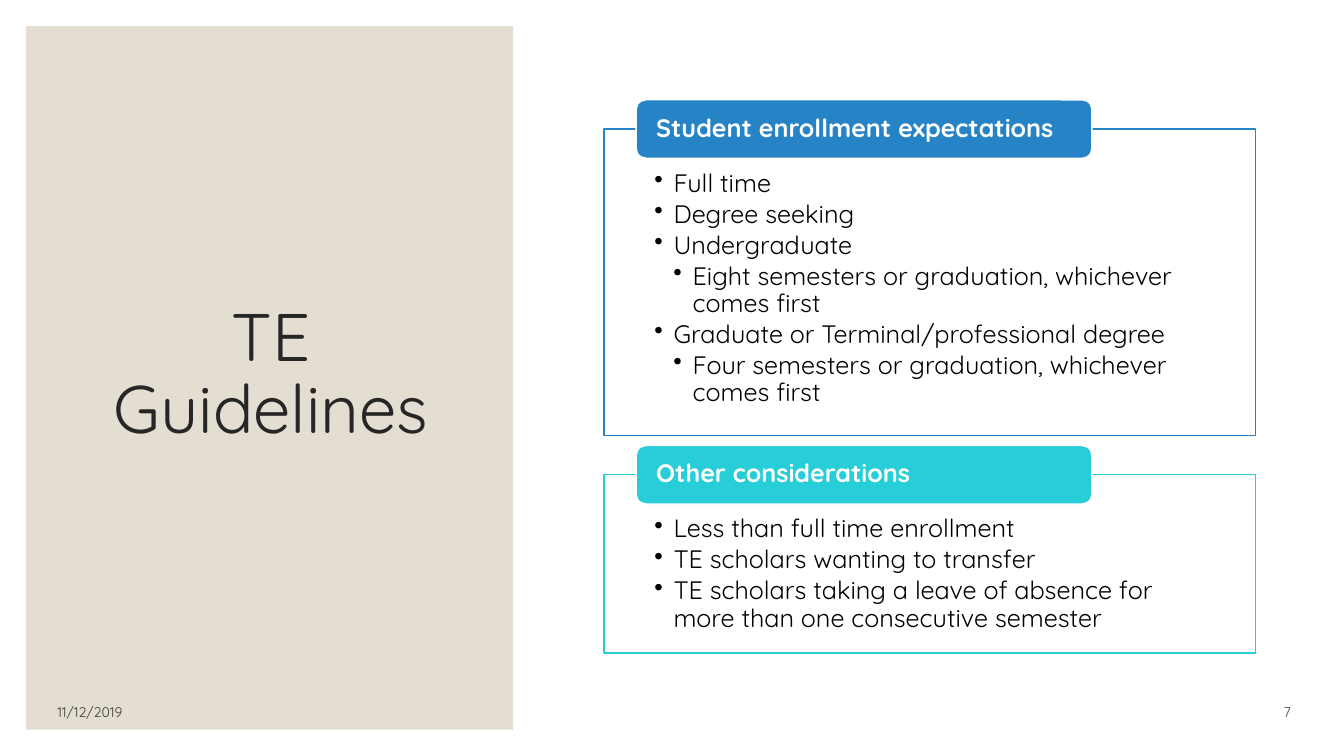
from lxml import etree
from pptx import Presentation
from pptx.dml.color import RGBColor
from pptx.enum.shapes import MSO_SHAPE
from pptx.enum.text import MSO_ANCHOR, PP_ALIGN
from pptx.oxml.ns import qn
from pptx.util import Inches, Pt

RECT, ROUNDED = MSO_SHAPE.RECTANGLE, MSO_SHAPE.ROUNDED_RECTANGLE
TOP, MIDDLE, BOTTOM = MSO_ANCHOR.TOP, MSO_ANCHOR.MIDDLE, MSO_ANCHOR.BOTTOM
LEFT, CENTER, RIGHT = PP_ALIGN.LEFT, PP_ALIGN.CENTER, PP_ALIGN.RIGHT

FONT = "Quicksand"
WHITE, BLACK = "FFFFFF", "000000"
BULLET_INDENT = 0.19

SECTIONS = [
    (0.99, 3.04, "2683C6", "Student enrollment expectations", [
        (1, "Full time"),
        (1, "Degree seeking"),
        (1, "Undergraduate"),
        (2, "Eight semesters or graduation, whichever comes first"),
        (1, "Graduate or Terminal/professional degree"),
        (2, "Four semesters or graduation, whichever comes first"),
    ]),
    (4.42, 1.77, "27CED7", "Other considerations", [
        (1, "Less than full time enrollment"),
        (1, "TE scholars wanting to transfer"),
        (1, "TE scholars taking a leave of absence for more than one consecutive semester"),
    ]),
]


def rgb(color):
    return RGBColor.from_string(color)


def add_box(slide, kind, bounds, fill, line=None):
    box = slide.shapes.add_shape(kind, *map(Inches, bounds))
    box.shadow.inherit = False
    box.fill.solid()
    box.fill.fore_color.rgb = rgb(fill)
    if line:
        box.line.color.rgb = rgb(line)
        box.line.width = Pt(1)
    else:
        box.line.fill.background()
    return box


def set_frame(frame, anchor, insets):
    frame.word_wrap = True
    frame.vertical_anchor = anchor
    (frame.margin_left, frame.margin_top,
     frame.margin_right, frame.margin_bottom) = map(Inches, insets)


def style_paragraph(paragraph, text, size, color, align=LEFT, bold=False):
    paragraph.text = text
    paragraph.alignment = align
    paragraph.line_spacing = 0.9
    font = paragraph.font
    font.name, font.size, font.bold = FONT, Pt(size), bold
    font.color.rgb = rgb(color)


def add_bullet(paragraph, level):
    paragraph.space_after = Pt(2.7)
    properties = paragraph._p.get_or_add_pPr()
    properties.set("marL", str(Inches(BULLET_INDENT * level)))
    properties.set("indent", str(-Inches(BULLET_INDENT)))
    bullet = etree.Element(qn("a:buChar"), char="•")
    properties.find(qn("a:defRPr")).addprevious(bullet)


def add_label(slide, bounds, text, size, color, anchor, align):
    label = slide.shapes.add_textbox(*map(Inches, bounds))
    set_frame(label.text_frame, anchor, (0.1, 0.05, 0.1, 0.05))
    style_paragraph(label.text_frame.paragraphs[0], text, size, color, align)


def add_section(slide, top, height, color, heading, items):
    body = add_box(slide, RECT, (5.99, top + 0.29, 6.46, height), WHITE, color)
    frame = body.text_frame
    set_frame(frame, TOP, (0.5, 0.41, 0.5, 0.14))
    for index, (level, text) in enumerate(items):
        paragraph = frame.add_paragraph() if index else frame.paragraphs[0]
        style_paragraph(paragraph, text, 18, BLACK)
        add_bullet(paragraph, level)

    tab = add_box(slide, ROUNDED, (6.31, top, 4.52, 0.58), color, WHITE)
    set_frame(tab.text_frame, MIDDLE, (0.17, 0, 0.17, 0))
    style_paragraph(tab.text_frame.paragraphs[0], heading, 18, WHITE, bold=True)


def main():
    deck = Presentation()
    deck.slide_width, deck.slide_height = Inches(13.33), Inches(7.5)
    slide = deck.slides.add_slide(deck.slide_layouts[6])
    add_box(slide, RECT, (0.26, 0.26, 4.83, 6.98), "E3DED1")
    add_label(slide, (0.63, 0.61, 4.12, 6.24), "TE Guidelines", 48, "262626", MIDDLE, CENTER)
    add_label(slide, (0.47, 6.9, 3, 0.3), "11/12/2019", 10, "404040", BOTTOM, LEFT)
    add_label(slide, (12, 6.9, 0.9, 0.3), "7", 10, "404040", BOTTOM, RIGHT)
    for section in SECTIONS:
        add_section(slide, *section)
    deck.save("out.pptx")


if __name__ == "__main__":
    main()
